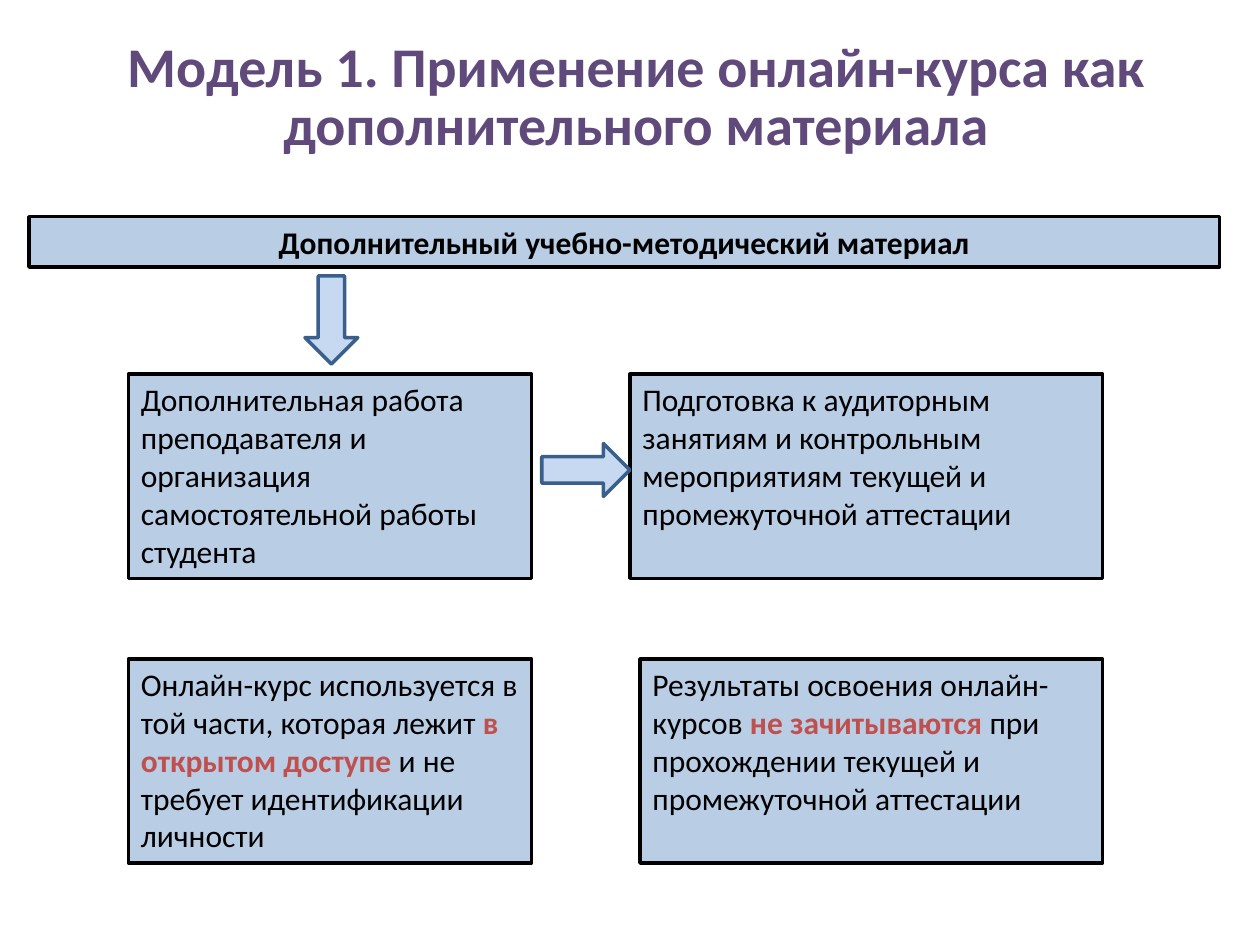
from pptx import Presentation
from pptx import util as u
from pptx.dml.color import RGBColor
from pptx.enum import shapes, text

PURPLE = RGBColor(0x60, 0x4A, 0x7B)
BLACK = RGBColor(0, 0, 0)
RED = RGBColor(0xC0, 0x50, 0x4D)
BOX_BLUE = RGBColor(0xB9, 0xCD, 0xE5)
ARROW_BLUE = RGBColor(0xC6, 0xD9, 0xF1)
ARROW_EDGE = RGBColor(0x3A, 0x5F, 0x8C)


class Board:
    """Holds the style and the current slide."""

    font_name = "Calibri"
    line_width = u.Pt(2)

    def __init__(self, slide):
        self.slide = slide

    def set_font(self, font, size, color, bold=False):
        font.name = self.font_name
        font.size = u.Pt(size)
        font.bold = bold
        font.color.rgb = color

    def title(self, words, left, top, width, height):
        title = self.slide.shapes.title
        title.left, title.top = u.Inches(left), u.Inches(top)
        title.width, title.height = u.Inches(width), u.Inches(height)
        frame = title.text_frame
        frame.text = words
        frame.auto_size = text.MSO_AUTO_SIZE.NONE
        frame.vertical_anchor = text.MSO_ANCHOR.MIDDLE
        # The deeper bottom margin lifts the two lines
        frame.margin_top, frame.margin_bottom = 0, u.Inches(0.46)
        para = frame.paragraphs[0]
        para.alignment = text.PP_ALIGN.CENTER
        para.line_spacing = u.Pt(33)
        self.set_font(para.font, 32, PURPLE, bold=True)

    def shape(self, kind, left, top, width, height, fill, edge):
        shape = self.slide.shapes.add_shape(
            kind, u.Inches(left), u.Inches(top), u.Inches(width), u.Inches(height))
        shape.shadow.inherit = False
        shape.fill.solid()
        shape.fill.fore_color.rgb = fill
        shape.line.color.rgb = edge
        shape.line.width = self.line_width
        return shape

    def box(self, spans, left, top, width, height,
            align=text.PP_ALIGN.LEFT, bold=False):
        """Spans alternate between plain and highlighted words."""
        box = self.shape(shapes.MSO_SHAPE.RECTANGLE, left, top, width, height,
                         BOX_BLUE, BLACK)
        frame = box.text_frame
        frame.word_wrap = True
        frame.vertical_anchor = text.MSO_ANCHOR.TOP
        para = frame.paragraphs[0]
        para.alignment = align
        self.set_font(para.font, 18, BLACK, bold)
        for index, words in enumerate(spans):
            span = para.add_run()
            span.text = words
            if index % 2:
                span.font.bold = True
                span.font.color.rgb = RED

    def arrow(self, kind, left, top, width, height):
        self.shape(kind, left, top, width, height, ARROW_BLUE, ARROW_EDGE)


def main():
    deck = Presentation()
    deck.slide_width, deck.slide_height = u.Inches(10), u.Inches(7.5)
    board = Board(deck.slides.add_slide(deck.slide_layouts[5]))

    # Title and banner
    board.title("Модель 1. Применение онлайн-курса как дополнительного материала",
                0.55, 0.39, 9, 1.25)
    board.box(["Дополнительный учебно-методический материал"],
              0.23, 1.72, 9.45, 0.4, text.PP_ALIGN.CENTER, bold=True)

    # Two rows of boxes; the right column ends on one edge
    left, left_width, right_edge, height = 1.02, 3.2, 8.75, 1.62
    rows = [
        (2.97, 5,
         ["Дополнительная работа преподавателя и организация "
          "самостоятельной работы студента"],
         ["Подготовка к аудиторным занятиям и контрольным мероприятиям "
          "текущей и промежуточной аттестации"]),
        (5.23, 5.08,
         ["Онлайн-курс используется в той части, которая лежит ",
          "в открытом доступе", " и не требует идентификации личности"],
         ["Результаты освоения онлайн-курсов ", "не зачитываются ",
          "при прохождении текущей и промежуточной аттестации"]),
    ]
    for top, right, left_spans, right_spans in rows:
        board.box(left_spans, left, top, left_width, height)
        board.box(right_spans, right, top, right_edge - right, height)

    # Arrows
    length, breadth = 0.7, 0.42
    board.arrow(shapes.MSO_SHAPE.DOWN_ARROW, 2.42, 2.19, breadth, length)
    board.arrow(shapes.MSO_SHAPE.RIGHT_ARROW, 4.3, 3.52, length, breadth)

    deck.save("out.pptx")


if __name__ == "__main__":
    main()
